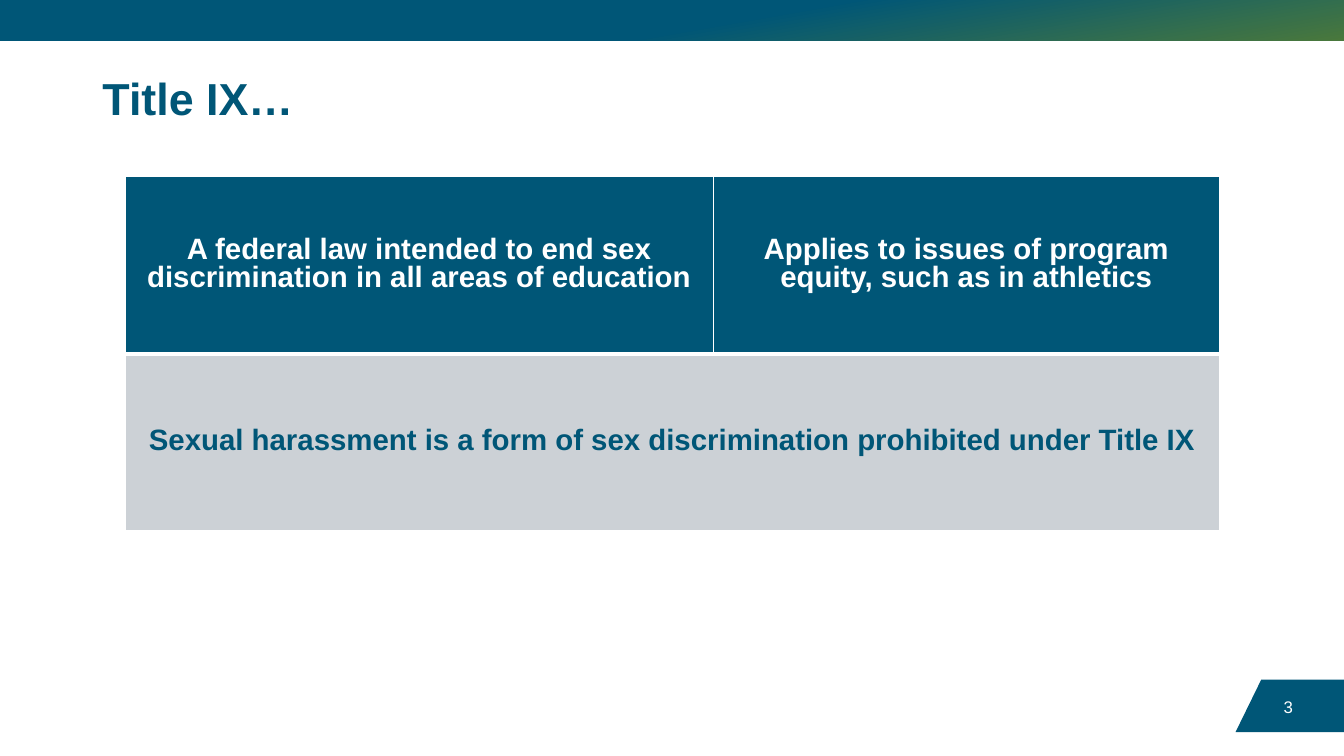
from lxml import etree
from pptx import Presentation
from pptx.dml.color import RGBColor
from pptx.enum.shapes import MSO_SHAPE
from pptx.enum.text import MSO_ANCHOR, PP_ALIGN
from pptx.oxml.ns import qn
from pptx.util import Pt

RECTANGLE = MSO_SHAPE.RECTANGLE
PARALLELOGRAM = MSO_SHAPE.PARALLELOGRAM
TOP, MIDDLE = MSO_ANCHOR.TOP, MSO_ANCHOR.MIDDLE
LEFT, CENTER = PP_ALIGN.LEFT, PP_ALIGN.CENTER

TEAL, GREEN, GRAY, WHITE = "005677", "49783C", "CCD1D6", "FFFFFF"
TITLE_ONLY = 5


def color(hex_value):
    return RGBColor.from_string(hex_value)


def points(*lengths):
    return [Pt(length) for length in lengths]


def set_attributes(target, values):
    for name, value in values.items():
        setattr(target, name, value)


class SlideBuilder:
    font_name = "Arial"

    def __init__(self, slide):
        self.slide = slide

    def set_text(self, text_frame, text, size, hex_value, bold=False, align=CENTER, spacing=1.0):
        text_frame.text = text
        paragraph = text_frame.paragraphs[0]
        set_attributes(paragraph, {"alignment": align, "line_spacing": spacing,
                                   "space_before": Pt(0)})
        set_attributes(paragraph.font, {"name": self.font_name, "size": Pt(size), "bold": bold})
        paragraph.font.color.rgb = color(hex_value)

    def title(self, text, left, top, width, height):
        title = self.slide.shapes.title
        set_attributes(title, dict(zip(("left", "top", "width", "height"),
                                       points(left, top, width, height))))
        title.text_frame.vertical_anchor = TOP
        self.set_text(title.text_frame, text, 32, TEAL, bold=True, align=LEFT, spacing=0.9)

    def shape(self, kind, left, top, width, height):
        shape = self.slide.shapes.add_shape(kind, *points(left, top, width, height))
        shape.shadow.inherit = False
        shape.line.fill.background()
        return shape

    def gradient_bar(self, left, top, width, height, stops, angle):
        """Angle is clockwise in degrees; stops are two (position, hex) pairs."""
        fill = self.shape(RECTANGLE, left, top, width, height).fill
        fill.gradient()
        fill.gradient_angle = 360 - angle
        for stop, (position, hex_value) in zip(fill.gradient_stops, stops):
            stop.position = position
            stop.color.rgb = color(hex_value)

    def corner_tab(self, left, top, width, height, slant):
        tab = self.shape(PARALLELOGRAM, left, top, width, height)
        tab.adjustments[0] = slant
        tab.fill.solid()
        tab.fill.fore_color.rgb = color(TEAL)

    def label(self, text, left, top, width, height, size, hex_value):
        box = self.slide.shapes.add_textbox(*points(left, top, width, height))
        set_attributes(box.text_frame, {"word_wrap": True, "vertical_anchor": MIDDLE})
        self.set_text(box.text_frame, text, size, hex_value)

    def border(self, cell, widths):
        """Draw white borders; widths are left, right, top, bottom in points."""
        properties = cell._tc.get_or_add_tcPr()
        for side, width in zip("LRTB", widths):
            line = etree.SubElement(properties, qn(f"a:ln{side}"), w=str(Pt(width)))
            fill = etree.SubElement(line, qn("a:solidFill"))
            etree.SubElement(fill, qn("a:srgbClr"), val=WHITE)

    def cell(self, cell, text, fill, text_color, borders):
        self.border(cell, borders)
        cell.fill.solid()
        cell.fill.fore_color.rgb = color(fill)
        set_attributes(cell, {"vertical_anchor": MIDDLE,
                              "margin_left": Pt(9.4), "margin_right": Pt(9.4),
                              "margin_top": Pt(4.7), "margin_bottom": Pt(4.7)})
        self.set_text(cell.text_frame, text, 21, text_color, bold=True, spacing=0.85)

    def table(self, left, top, column_widths, row_height, header, statement):
        """A teal header row above one gray cell that spans all columns."""
        frame = self.slide.shapes.add_table(2, len(column_widths), *points(
            left, top, sum(column_widths), 2 * row_height))
        table = frame.table
        for column, width in zip(table.columns, column_widths):
            column.width = Pt(width)
        for row in table.rows:
            row.height = Pt(row_height)
        for cell, text in zip(table.rows[0].cells, header):
            self.cell(cell, text, TEAL, WHITE, (1, 1, 1, 3))
        table.cell(1, 0).merge(table.cell(1, len(column_widths) - 1))
        self.cell(table.cell(1, 0), statement, GRAY, TEAL, (1, 1, 3, 1))


def main():
    presentation = Presentation()
    presentation.slide_width, presentation.slide_height = points(960, 540)
    builder = SlideBuilder(presentation.slides.add_slide(presentation.slide_layouts[TITLE_ONLY]))

    builder.corner_tab(882.5, 485.5, 112, 37.5, slant=0.49)
    builder.gradient_bar(0, 0, 960, 29, stops=((0.54, TEAL), (1, GREEN)), angle=80)
    builder.title("Title IX…", 66, 51, 828, 69)
    builder.label("3", 901.5, 490, 37.5, 29, 12, WHITE)
    builder.table(
        89.3, 126.3, (420.2, 361.5), 126.5,
        header=("A federal law intended to end sex discrimination in all areas of education",
                "Applies to issues of program equity, such as in athletics"),
        statement="Sexual harassment is a form of sex discrimination prohibited under Title IX")

    presentation.save("out.pptx")


if __name__ == "__main__":
    main()
